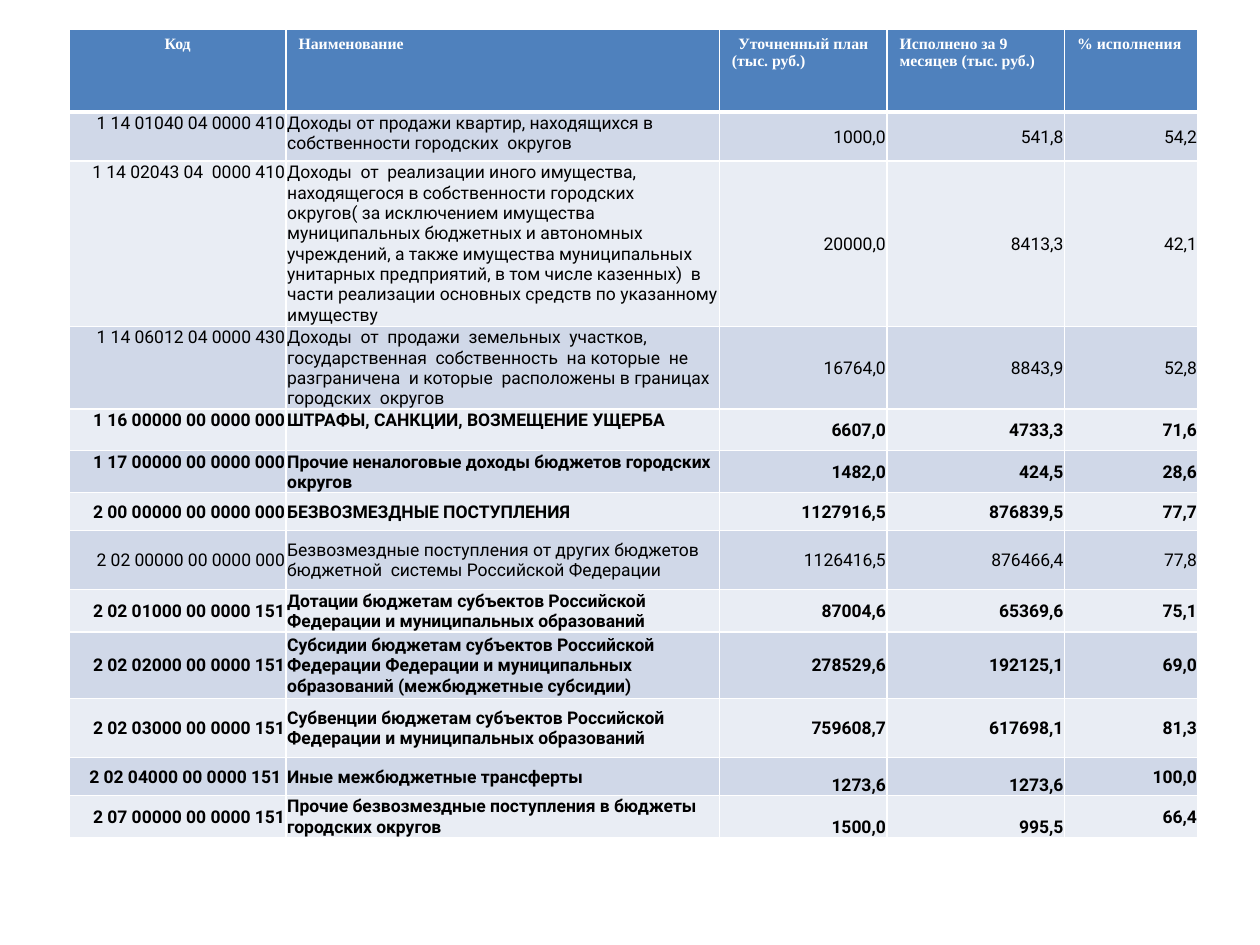
"""Build the slide with the table of budget revenues for nine months."""
from lxml import etree
from pptx import Presentation, util as u
from pptx.dml.color import RGBColor
from pptx.enum.text import MSO_ANCHOR, PP_ALIGN
from pptx.oxml.ns import qn

WHITE = RGBColor(0xFF, 0xFF, 0xFF)
BLACK = RGBColor(0, 0, 0)
HEADER_BLUE = RGBColor(0x4F, 0x81, 0xBD)
BANDS = RGBColor(0xE9, 0xED, 0xF4), RGBColor(0xD0, 0xD8, 0xE8)
LEFT, CENTER, RIGHT = PP_ALIGN.LEFT, PP_ALIGN.CENTER, PP_ALIGN.RIGHT
TOP, MIDDLE, BOTTOM = MSO_ANCHOR.TOP, MSO_ANCHOR.MIDDLE, MSO_ANCHOR.BOTTOM

COLUMN_WIDTHS = [1.72, 3.44, 1.33, 1.41, 1.06]
HEADER_HEIGHT = 0.66
HEADINGS = [
    [("Код", CENTER)],
    [("Наименование", LEFT)],
    [("Уточненный план", CENTER), ("(тыс. руб.)", LEFT)],
    [("Исполнено за 9 месяцев (тыс. руб.)", LEFT)],
    [("% исполнения", LEFT)],
]

# height, bold, anchor of code and name, anchor of plan and actual, five texts
REVENUES = [
    (0.39, False, TOP, MIDDLE, "1 14 01040 04 0000 410",
     "Доходы от продажи квартир, находящихся в собственности городских  округов",
     "1000,0", "541,8", "54,2"),
    (1.31, False, TOP, MIDDLE, "1 14 02043 04  0000 410",
     "Доходы  от  реализации иного имущества, находящегося в собственности городских "
     "округов( за исключением имущества муниципальных бюджетных и автономных учреждений, "
     "а также имущества муниципальных унитарных предприятий, в том числе казенных)  в "
     "части реализации основных средств по указанному имуществу",
     "20000,0", "8413,3", "42,1"),
    (0.65, False, TOP, MIDDLE, "1 14 06012 04 0000 430",
     "Доходы  от  продажи  земельных  участков, государственная  собственность  на "
     "которые  не разграничена  и которые  расположены в границах городских  округов",
     "16764,0", "8843,9", "52,8"),
    (0.33, True, TOP, MIDDLE, "1 16 00000 00 0000 000",
     "ШТРАФЫ, САНКЦИИ, ВОЗМЕЩЕНИЕ УЩЕРБА", "6607,0", "4733,3", "71,6"),
    (0.33, True, TOP, MIDDLE, "1 17 00000 00 0000 000",
     "Прочие неналоговые доходы бюджетов городских округов", "1482,0", "424,5", "28,6"),
    (0.3, True, MIDDLE, MIDDLE, "2 00 00000 00 0000 000",
     "БЕЗВОЗМЕЗДНЫЕ ПОСТУПЛЕНИЯ", "1127916,5", "876839,5", "77,7"),
    (0.47, False, MIDDLE, MIDDLE, "2 02 00000 00 0000 000",
     "Безвозмездные поступления от других бюджетов бюджетной  системы Российской Федерации",
     "1126416,5", "876466,4", "77,8"),
    (0.33, True, MIDDLE, MIDDLE, "2 02 01000 00 0000 151",
     "Дотации бюджетам субъектов Российской Федерации и муниципальных образований",
     "87004,6", "65369,6", "75,1"),
    (0.53, True, MIDDLE, MIDDLE, "2 02 02000 00 0000 151",
     "Субсидии бюджетам субъектов Российской Федерации Федерации и муниципальных "
     "образований (межбюджетные субсидии)", "278529,6", "192125,1", "69,0"),
    (0.47, True, MIDDLE, MIDDLE, "2 02 03000 00 0000 151",
     "Субвенции бюджетам субъектов Российской Федерации и муниципальных образований",
     "759608,7", "617698,1", "81,3"),
    (0.3, True, MIDDLE, BOTTOM, "2 02 04000 00 0000 151",
     "Иные межбюджетные трансферты", "1273,6", "1273,6", "100,0"),
    (0.33, True, MIDDLE, BOTTOM, "2 07 00000 00 0000 151",
     "Прочие безвозмездные поступления в бюджеты городских округов",
     "1500,0", "995,5", "66,4"),
]


def style_cell(cell, fill, bottom_width=1, top_width=1):
    cell.fill.solid()
    cell.fill.fore_color.rgb = fill
    properties = cell._tc.get_or_add_tcPr()
    widths = {"lnL": 1, "lnR": 1, "lnT": top_width, "lnB": bottom_width}
    for position, (side, width) in enumerate(widths.items()):
        line = etree.Element(qn(f"a:{side}"), w=str(u.Pt(width)))
        color = etree.SubElement(line, qn("a:solidFill"))
        etree.SubElement(color, qn("a:srgbClr"), val=str(WHITE))
        properties.insert(position, line)


def write_cell(cell, lines, font_name, size, color, bold):
    frame = cell.text_frame
    for index, (wording, alignment) in enumerate(lines):
        paragraph = frame.add_paragraph() if index else frame.paragraphs[0]
        paragraph.alignment = alignment
        run = paragraph.add_run()
        run.text = wording
        run.font.name, run.font.size, run.font.bold = font_name, u.Pt(size), bold
        run.font.color.rgb = color


deck = Presentation()
deck.slide_width, deck.slide_height = u.Inches(10), u.Inches(7.5)
slide = deck.slides.add_slide(deck.slide_layouts[6])

row_heights = [HEADER_HEIGHT] + [revenue[0] for revenue in REVENUES]
budget = slide.shapes.add_table(
    len(row_heights), len(COLUMN_WIDTHS), u.Inches(0.55), u.Inches(0.23),
    u.Inches(sum(COLUMN_WIDTHS)), u.Inches(sum(row_heights))).table
for column, width in zip(budget.columns, COLUMN_WIDTHS):
    column.width = u.Inches(width)
for row, height in zip(budget.rows, row_heights):
    row.height = u.Inches(height)

for column, lines in enumerate(HEADINGS):
    heading = budget.cell(0, column)
    style_cell(heading, HEADER_BLUE, bottom_width=3)
    write_cell(heading, lines, "Times New Roman", 9, WHITE, True)

for row, (_, bold, label_anchor, amount_anchor, *wordings) in enumerate(REVENUES, 1):
    anchors = [label_anchor] * 2 + [amount_anchor] * 2 + [MIDDLE]
    for column, (wording, anchor) in enumerate(zip(wordings, anchors)):
        entry = budget.cell(row, column)
        style_cell(entry, BANDS[row % 2], top_width=3 if row == 1 else 1)
        entry.margin_left = entry.margin_right = entry.margin_top = u.Inches(0.01)
        entry.margin_bottom = 0
        entry.vertical_anchor = anchor
        alignment = LEFT if column == 1 else RIGHT
        write_cell(entry, [(wording, alignment)], "Roboto", 10, BLACK, bold)

transfers_row = len(REVENUES) - 1
budget.cell(transfers_row, 0).margin_right = u.Inches(0.04)

deck.save("out.pptx")
